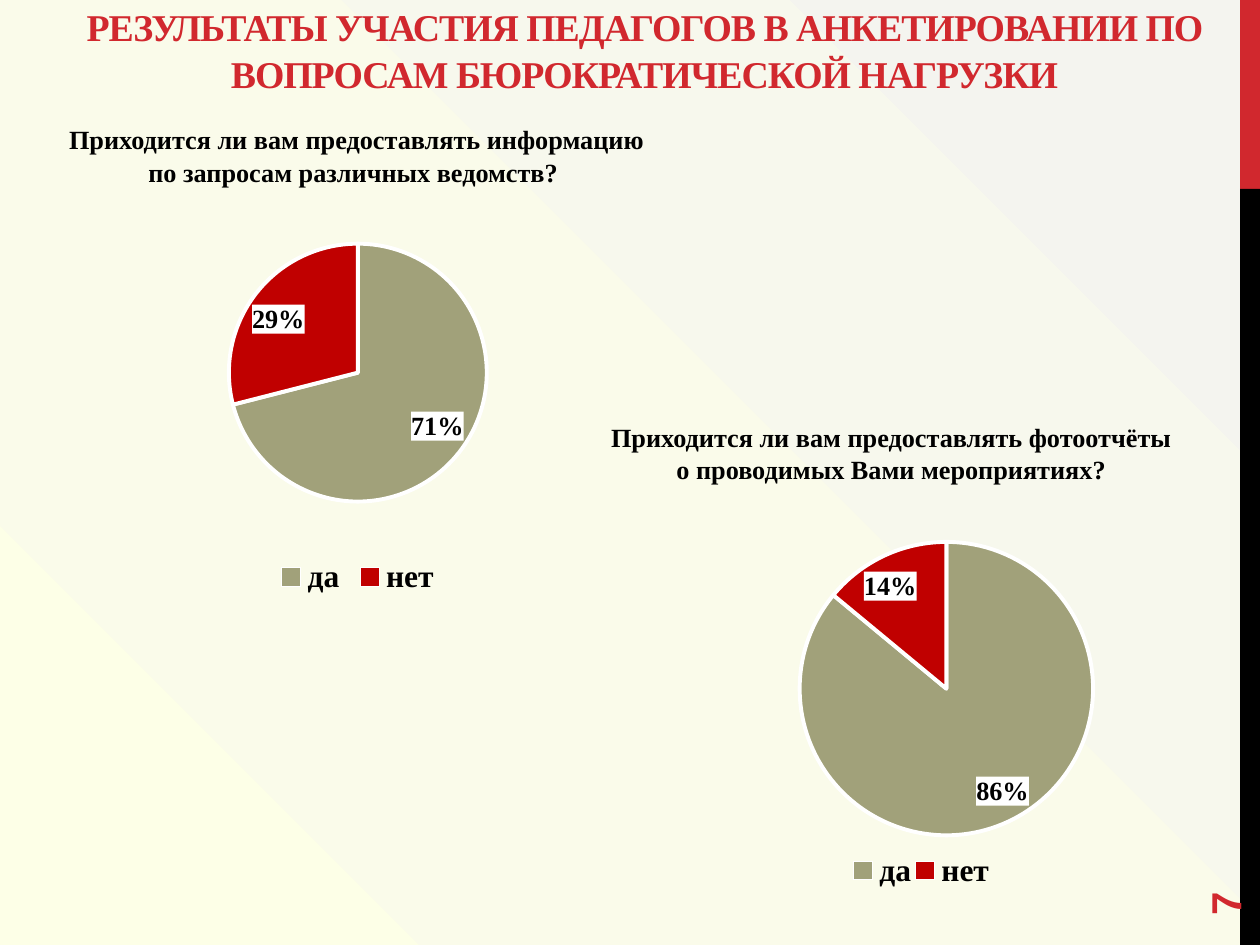
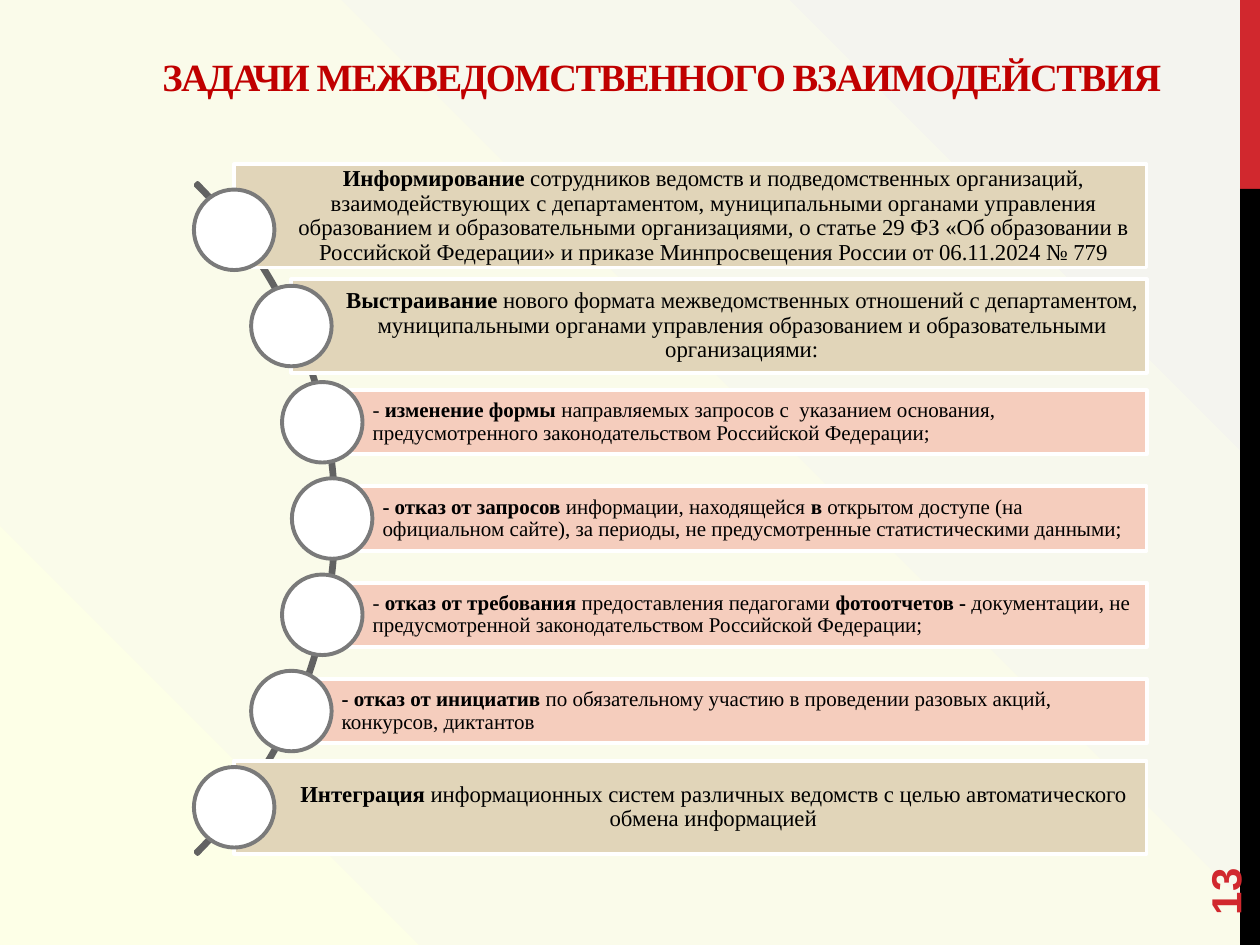
from dataclasses import dataclass
from math import sqrt

from lxml.etree import SubElement
from pptx import Presentation
from pptx.chart.data import CategoryChartData
from pptx.dml.color import RGBColor
from pptx.enum.chart import XL_CHART_TYPE, XL_LABEL_POSITION, XL_LEGEND_POSITION
from pptx.enum.shapes import MSO_SHAPE
from pptx.enum.text import MSO_ANCHOR, PP_ALIGN
from pptx.oxml import parse_xml
from pptx.oxml.ns import nsdecls, qn
from pptx.util import Pt


@dataclass(frozen=True)
class Theme:
    red: str = "D1282E"
    deep: str = "C00000"
    olive: str = "A1A17A"
    sand: str = "E1D5B9"
    rose: str = "F5CDBD"
    arc: str = "626262"
    ring: str = "7A7A7A"
    black: str = "000000"
    white: str = "FFFFFF"
    glow: tuple = ((0, "FDFFE7"), (38, "FAFBEA"), (99, "F4F4EF"))
    serif: str = "Times New Roman"
    sans: str = "Arial"
    head: float = 21.6
    task: float = 22
    page: float = 24
    ask: float = 15
    key: float = 18
    main: float = 13
    sub: float = 12
    line: float = 2.25


T = Theme()

# Task rows: level, height, upward shift, text with *bold* parts
TASKS = (
    ("main", 59, 7.9, "*Информирование* сотрудников ведомств и подведомственных организаций, "
     "взаимодействующих с департаментом, муниципальными органами управления образованием "
     "и образовательными организациями, о статье 29 ФЗ «Об образовании в Российской "
     "Федерации» и приказе Минпросвещения России от 06.11.2024 № 779"),
    ("main", 53.3, 0, "*Выстраивание* нового формата межведомственных отношений с департаментом, "
     "муниципальными органами управления образованием и образовательными организациями:"),
    ("sub", 36.7, 0, "- *изменение формы *направляемых запросов с  указанием основания, "
     "предусмотренного законодательством Российской Федерации;"),
    ("sub", 36.7, 0, "*- отказ от запросов* информации, находящейся *в *открытом доступе "
     "(на официальном сайте), за периоды, не предусмотренные статистическими данными;"),
    ("sub", 36.7, 0, "- *отказ от требования *предоставления педагогами *фотоотчетов - *документации, "
     "не предусмотренной законодательством Российской Федерации;"),
    ("sub", 36.7, 0, "*- отказ от инициатив *по обязательному участию в проведении "
     "разовых акций, конкурсов, диктантов"),
    ("main", 53.3, 0, "*Интеграция* информационных систем различных ведомств с целью "
     "автоматического обмена информацией"),
)
LEVELS = {
    "main": dict(fill=T.sand, size=T.main, align=PP_ALIGN.CENTER, pad=2.9),
    "sub": dict(fill=T.rose, size=T.sub, align=PP_ALIGN.LEFT, pad=2.2),
}


def put(obj, **vals):
    for name, val in vals.items():
        setattr(obj, name, val)


def ink(font, size, color=T.black, bold=True, name=T.serif):
    put(font, size=Pt(size), bold=bold, name=name)
    font.color.rgb = RGBColor.from_string(color)


def box(at):
    return [Pt(v) for v in at]


def shape(slide, kind, at, fill=None, line=None):
    item = slide.shapes.add_shape(kind, *box(at))
    item.shadow.inherit = False
    if fill:
        item.fill.solid()
        item.fill.fore_color.rgb = RGBColor.from_string(fill)
    else:
        item.fill.background()
    if line:
        item.line.color.rgb = RGBColor.from_string(line)
        item.line.width = Pt(T.line)
    else:
        item.line.fill.background()
    return item


def write(frame, lines, size, color=T.black, name=T.serif, bold=True,
          space=0, para=None, **form):
    """Fill a text frame; asterisks in a line switch bold on and off."""
    put(frame, word_wrap=True, **form)
    for i, line in enumerate(lines):
        part = frame.add_paragraph() if i else frame.paragraphs[0]
        put(part, **(para or {}))
        for j, text in enumerate(line.split("*")):
            if not text:
                continue
            run = part.add_run()
            run.text = text
            ink(run.font, size, color, bold or j % 2 == 1, name)
            if space:
                run.font._element.set("spc", str(round(space * 100)))


def label(slide, at, lines, size, **form):
    item = slide.shapes.add_textbox(*box(at))
    write(item.text_frame, lines, size, **form)
    return item


def glow(master):
    """Give all slides the radial wash from the lower left corner."""
    master.background.fill.gradient()
    grad = next(master.element.iter(qn("a:gradFill")))
    stops = "".join(f'<a:gs pos="{pos * 1000}"><a:srgbClr val="{color}"/></a:gs>'
                    for pos, color in T.glow)
    new = parse_xml(
        f'<a:gradFill {nsdecls("a")} rotWithShape="1"><a:gsLst>{stops}</a:gsLst>'
        '<a:path path="circle"><a:fillToRect t="100000" r="100000"/></a:path></a:gradFill>')
    grad.getparent().replace(grad, new)


def start(deck, page):
    """Add a slide with the side bands and its page number."""
    slide = deck.slides.add_slide(deck.slide_layouts[6])
    shape(slide, MSO_SHAPE.RECTANGLE, (708.7, 0, 11.3, 108), T.red)
    shape(slide, MSO_SHAPE.RECTANGLE, (708.7, 108, 11.3, 432), T.black)
    mark = label(slide, (648, 463.7, 103.7, 28.8), [page], T.page, color=T.red,
                 name=T.sans, vertical_anchor=MSO_ANCHOR.MIDDLE)
    mark.rotation = 270
    return slide


def place(part, spot, sizes, inner=False):
    """Set a manual layout on a chart part, as fractions of the chart."""
    for old in part.findall(qn("c:layout")):
        part.remove(old)
    layout = parse_xml(f'<c:layout {nsdecls("c")}><c:manualLayout/></c:layout>')
    marks = [("layoutTarget", "inner")] if inner else []
    marks += [("xMode", "edge"), ("yMode", "edge"), *zip("xywh", sizes)]
    for tag, val in marks:
        SubElement(layout[0], qn(f"c:{tag}")).set("val", str(val))
    part.insert(spot, layout)


def coat(fill):
    return parse_xml(f'<c:spPr {nsdecls("c", "a")}>{fill}</c:spPr>')


def pie(slide, at, vals, plot, key=None):
    data = CategoryChartData(number_format="0%")
    data.categories = ["да", "нет"]
    data.add_series("Series 1", vals)
    chart = slide.shapes.add_chart(XL_CHART_TYPE.PIE, *box(at), data).chart
    put(chart, has_title=False, has_legend=True)
    ink(chart.font, T.ask)
    put(chart.legend, position=XL_LEGEND_POSITION.BOTTOM, include_in_layout=False)
    ink(chart.legend.font, T.key)

    pie_plot = chart.plots[0]
    put(pie_plot, vary_by_categories=True, has_data_labels=True)
    tags = pie_plot.data_labels
    put(tags, show_value=True, show_percentage=False, number_format="0%",
        number_format_is_linked=False, position=XL_LABEL_POSITION.BEST_FIT)
    ink(tags.font, T.ask)
    for i, color in enumerate((T.olive, T.deep)):
        form = pie_plot.series[0].points[i].format
        form.fill.solid()
        form.fill.fore_color.rgb = RGBColor.from_string(color)
        form.line.color.rgb = RGBColor.from_string(T.white)
        form.line.width = Pt(T.line)

    root = chart.element
    root.find(qn("c:chart")).addnext(coat("<a:noFill/>"))
    text = next(root.iter(qn("c:dLbls"))).find(qn("c:txPr"))
    text.addprevious(coat(f'<a:solidFill><a:srgbClr val="{T.white}"/></a:solidFill>'))
    place(next(root.iter(qn("c:plotArea"))), 0, plot, inner=True)
    if key:
        place(next(root.iter(qn("c:legend"))), 1, key)


def survey(deck):
    slide = start(deck, "7")
    mid = dict(alignment=PP_ALIGN.CENTER, line_spacing=1.04)
    label(slide, (36.7, 1.4, 663.1, 56.9),
          ["РЕЗУЛЬТАТЫ УЧАСТИЯ ПЕДАГОГОВ В АНКЕТИРОВАНИИ ПО ВОПРОСАМ БЮРОКРАТИЧЕСКОЙ НАГРУЗКИ"],
          T.head, color=T.red, space=-0.6, para=mid, vertical_anchor=MSO_ANCHOR.BOTTOM)
    label(slide, (31, 66.2, 345.6, 43.9),
          ["Приходится ли вам предоставлять информацию ",
           "по запросам различных ведомств? "], T.ask, para=mid)
    label(slide, (341.3, 236.2, 339.8, 43.9),
          ["Приходится ли вам предоставлять фотоотчёты ",
           "о проводимых Вами мероприятиях? "], T.ask, para=mid)
    pie(slide, (25.2, 116.6, 358.6, 226.8), (0.71, 0.29), (0.09, 0.1, 0.82, 0.65))
    pie(slide, (377.3, 283.7, 317.5, 236.2), (0.86, 0.14), (0.25, 0.11, 0.53, 0.71),
        key=(0.34, 0.85, 0.26, 0.11))


def tasks(deck):
    slide = start(deck, "13")
    title = label(slide, (70.6, 15.1, 607, 41.8), ["ЗАДАЧИ МЕЖВЕДОМСТВЕННОГО ВЗАИМОДЕЙСТВИЯ"],
                  T.task, color=T.deep, space=-0.8, para=dict(alignment=PP_ALIGN.CENTER),
                  margin_left=0, margin_top=Pt(15.1), margin_right=0, margin_bottom=0)
    title.text_frame.paragraphs[0]._p.get_or_add_pPr().set("marL", str(Pt(8)))

    mid_x, mid_y, rad = -78.8, 296.3, 271.1
    step, dot, right = 55, 46, 655.2
    arc = shape(slide, MSO_SHAPE.BLOCK_ARC, (mid_x - rad, mid_y - rad, 2 * rad, 2 * rad),
                line=T.arc)
    for i, val in enumerate((189, 27, 0.003)):
        arc.adjustments[i] = val

    for i, (level, high, lift, text) in enumerate(TASKS):
        look = LEVELS[level]
        rise = (i - len(TASKS) // 2) * step
        left = mid_x + sqrt(rad ** 2 - rise ** 2) - 2.5
        y = mid_y + rise
        bar = shape(slide, MSO_SHAPE.RECTANGLE,
                    (left, y - lift - high / 2, right - left, high), look["fill"], T.white)
        pad = Pt(look["pad"])
        write(bar.text_frame, [text], look["size"], bold=False,
              para=dict(alignment=look["align"], line_spacing=0.9),
              vertical_anchor=MSO_ANCHOR.MIDDLE, margin_left=Pt(28.8),
              margin_top=pad, margin_right=pad, margin_bottom=pad)
        shape(slide, MSO_SHAPE.OVAL, (left - dot / 2, y - dot / 2, dot, dot), T.white, T.ring)


def main():
    deck = Presentation()
    put(deck, slide_width=Pt(720), slide_height=Pt(540))
    glow(deck.slide_master)
    survey(deck)
    tasks(deck)
    deck.save("out.pptx")


if __name__ == "__main__":
    main()
